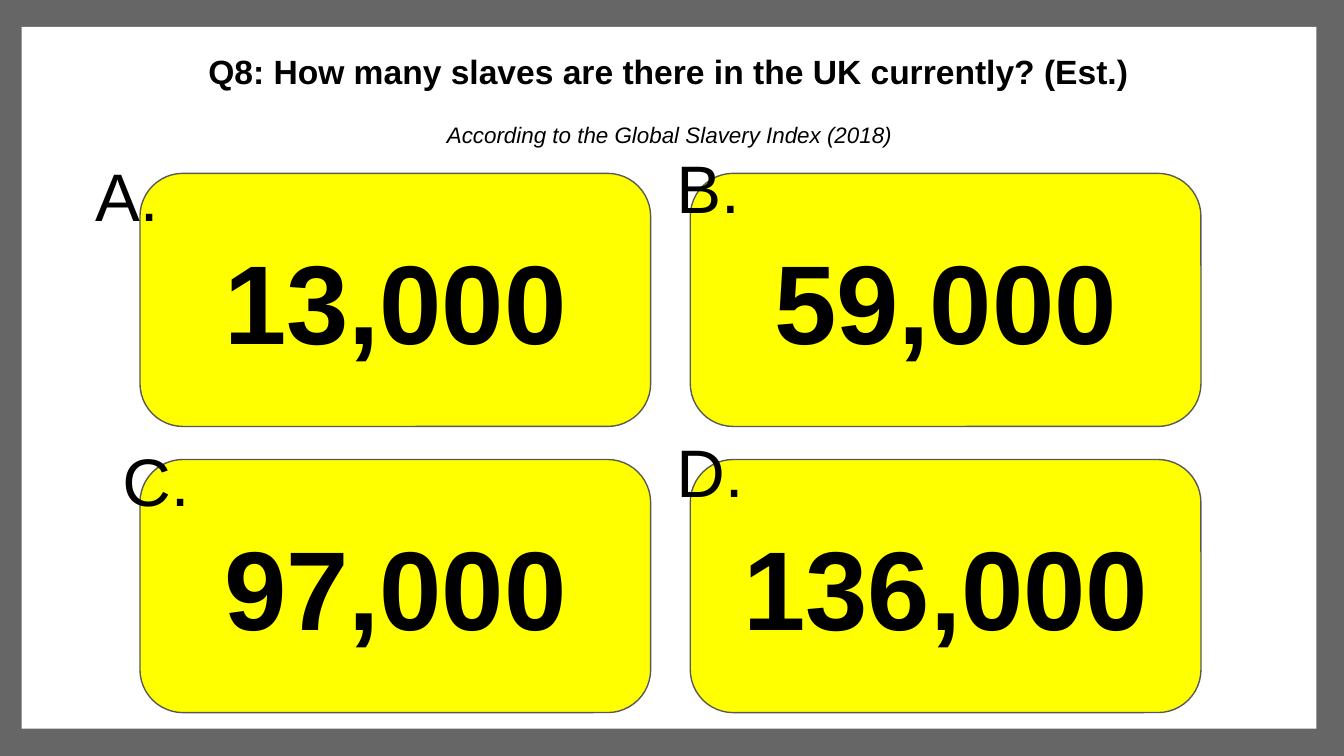
from pptx import Presentation
from pptx.dml.color import RGBColor
from pptx.enum.shapes import MSO_SHAPE
from pptx.enum.text import MSO_ANCHOR, MSO_AUTO_SIZE, PP_ALIGN
from pptx.util import Pt

GREY = RGBColor(0x66, 0x66, 0x66)
OUTLINE = RGBColor(0x59, 0x59, 0x59)
WHITE = RGBColor(0xFF, 0xFF, 0xFF)
YELLOW = RGBColor(0xFF, 0xFF, 0x00)
BLACK = RGBColor(0x00, 0x00, 0x00)


class QuizSlide:
    font = "Arial"
    inset = 7.2

    def __init__(self, slide):
        self.slide = slide

    def set_text(self, shape, text, size, align=PP_ALIGN.LEFT,
                 anchor=MSO_ANCHOR.TOP, **style):
        frame = shape.text_frame
        layout = {"word_wrap": True, "auto_size": MSO_AUTO_SIZE.NONE,
                  "vertical_anchor": anchor}
        for side in ("left", "top", "right", "bottom"):
            layout[f"margin_{side}"] = Pt(self.inset)
        for name, value in layout.items():
            setattr(frame, name, value)
        paragraph = frame.paragraphs[0]
        paragraph.alignment = align
        run = paragraph.add_run()
        run.text = text
        font_values = {"name": self.font, "size": Pt(size),
                       "bold": False, "italic": False} | style
        for name, value in font_values.items():
            setattr(run.font, name, value)
        run.font.color.rgb = BLACK

    def block(self, box, fill, kind=MSO_SHAPE.RECTANGLE):
        shape = self.slide.shapes.add_shape(kind, *map(Pt, box))
        shape.shadow.inherit = False
        shape.fill.solid()
        shape.fill.fore_color.rgb = fill
        shape.line.fill.background()
        return shape

    def title(self, text, box):
        title = self.slide.shapes.title
        for name, value in zip(("left", "top", "width", "height"), box):
            setattr(title, name, Pt(value))
        # Bring the title in front of the panels
        title.element.getparent().append(title.element)
        self.set_text(title, text, 18, bold=True)

    def label(self, text, box, size, **style):
        label = self.slide.shapes.add_textbox(*map(Pt, box))
        self.set_text(label, text, size, **style)

    def answer(self, text, box):
        card = self.block(box, YELLOW, MSO_SHAPE.ROUNDED_RECTANGLE)
        card.adjustments[0] = 0.17
        card.line.color.rgb = OUTLINE
        card.line.width = Pt(0.75)
        self.set_text(card, text, 60, PP_ALIGN.CENTER, MSO_ANCHOR.MIDDLE,
                      bold=True)


def main():
    deck = Presentation()
    deck.slide_width, deck.slide_height = Pt(720), Pt(405)
    quiz = QuizSlide(deck.slides.add_slide(deck.slide_layouts[5]))

    # Grey frame and white panel
    quiz.block((-1.5, 0, 721.5, 405), GREY)
    quiz.block((11.6, 14.4, 693.6, 376), WHITE)

    # Question and its source
    quiz.title("Q8: How many slaves are there in the UK currently? (Est.)",
               (104.4, 20.2, 510.5, 38))
    quiz.label("According to the Global Slavery Index (2018)",
               (232.3, 57.6, 256, 33), 12, italic=True)

    # Answers in a two by two grid
    left, top, width, height = 75, 92.9, 273.6, 135.6
    column_step, row_step = 294.8, 153.3
    for index, answer in enumerate(("13,000", "59,000", "97,000", "136,000")):
        row, column = divmod(index, 2)
        quiz.answer(answer, (left + column * column_step,
                             top + row * row_step, width, height))

    # Letters over the corners of the answers
    letters = {"A.": (43.9, 75.6), "B.": (355.2, 71.3),
               "C.": (58.5, 228.2), "D.": (355.2, 223.4)}
    for letter, corner in letters.items():
        quiz.label(letter, (*corner, 70, 52), 36)

    deck.save("out.pptx")


if __name__ == "__main__":
    main()
